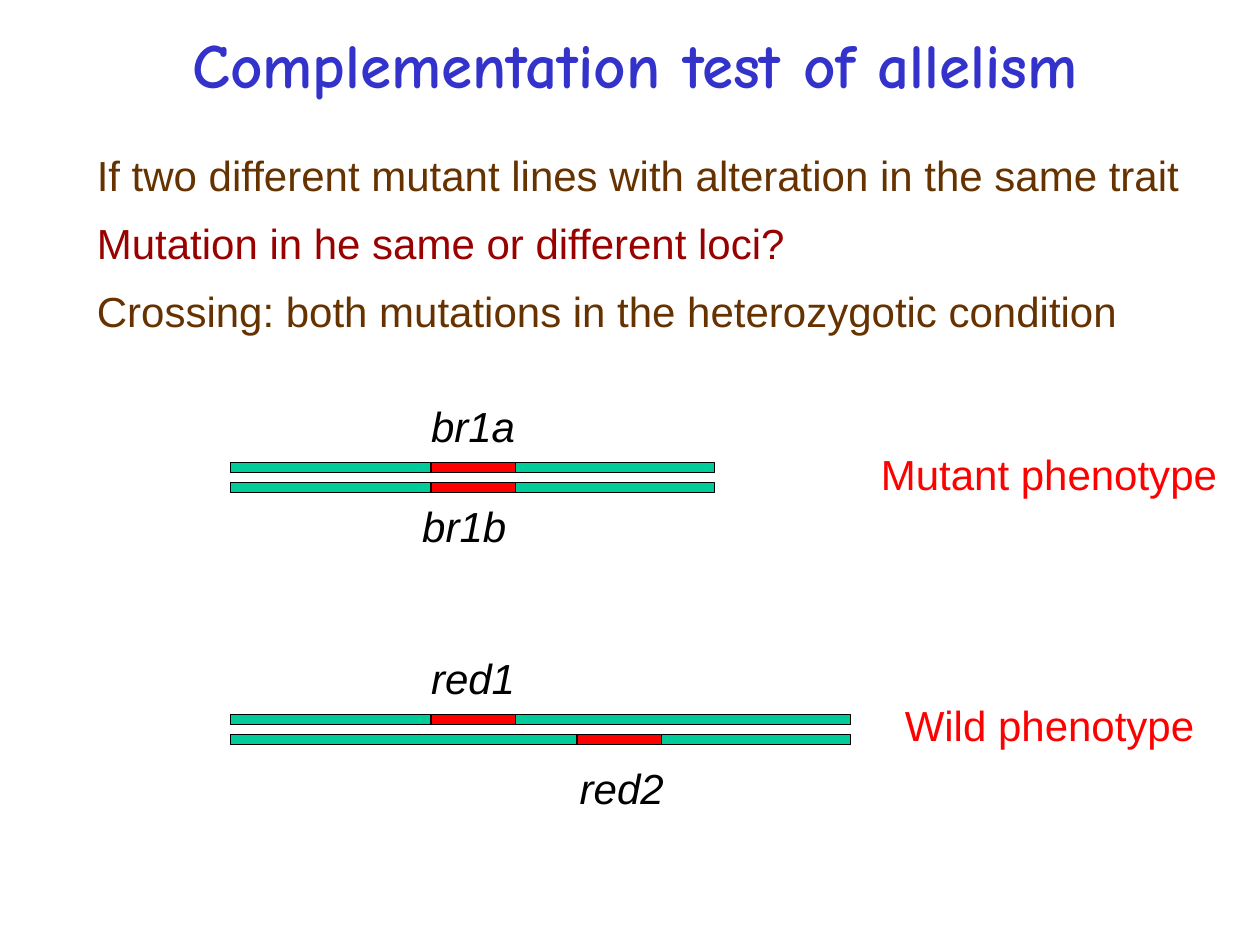
from dataclasses import dataclass

from pptx import Presentation
from pptx import util as u
from pptx.dml.color import RGBColor
from pptx.enum import shapes, text

COLORS = {
    "title": "3333CC",
    "brown": "663300",
    "dark_red": "990000",
    "chromosome": "00CC99",
    "red": "FF0000",
    "black": "000000",
}
STRAND_LEFT, STRAND_HEIGHT, LOCUS_WIDTH = 1.83, 0.08, 0.67
LABEL_HEIGHT = 0.5


@dataclass
class Strand:
    top: float
    right: float
    locus_left: float


@dataclass
class Label:
    caption: str
    left: float
    top: float
    width: float
    color: str = "black"
    italic: bool = True


STRANDS = [
    Strand(3.67, 5.67, 3.42),
    Strand(3.83, 5.67, 3.42),
    Strand(5.67, 6.75, 3.42),
    Strand(5.83, 6.75, 4.58),
]
LABELS = [
    Label("br1a", 3.32, 3.13, 0.87),
    Label("br1b", 3.25, 3.92, 0.87),
    Label("Mutant phenotype", 6.89, 3.51, 2.87, "red", False),
    Label("red1", 3.32, 5.13, 0.87),
    Label("red2", 4.5, 6, 0.87),
    Label("Wild phenotype", 7.08, 5.5, 2.5, "red", False),
]
# Statement, colour, line spacing, space before in points
STATEMENTS = [
    ("If two different mutant lines with alteration in the same trait", "brown", 1.35, 0),
    ("Mutation in he same or different loci?", "dark_red", 1.35, 0),
    ("Crossing: both mutations in the heterozygotic condition", "brown", 1, 9.7),
]


def rgb(name: str) -> RGBColor:
    return RGBColor.from_string(COLORS[name])


def add_box(page, left: float, top: float, width: float, height: float, wrap: bool = True):
    box = page.shapes.add_textbox(
        u.Inches(left), u.Inches(top), u.Inches(width), u.Inches(height))
    box.text_frame.word_wrap = wrap
    return box


def format_para(para, color: str, size: int = 24, font: str = "Arial",
                bold: bool = False, italic: bool = False) -> None:
    for span in para.runs:
        span.font.name = font
        span.font.size = u.Pt(size)
        span.font.bold = bold
        span.font.italic = italic
        span.font.color.rgb = rgb(color)


def add_title(page) -> None:
    frame = add_box(page, 0.33, 0.17, 9.42, 0.67).text_frame
    frame.text = "Complementation test of allelism"
    frame.vertical_anchor = text.MSO_ANCHOR.MIDDLE
    para = frame.paragraphs[0]
    para.alignment = text.PP_ALIGN.CENTER
    format_para(para, "title", size=36, font="Comic Neue", bold=True)


def add_statements(page) -> None:
    frame = add_box(page, 0.67, 1, 8.92, 1.66).text_frame
    frame.text = "\n".join(statement[0] for statement in STATEMENTS)
    for para, (_, color, spacing, before) in zip(frame.paragraphs, STATEMENTS):
        para.line_spacing = spacing
        para.space_before = u.Pt(before)
        format_para(para, color)


def add_segment(page, left: float, right: float, top: float, color: str) -> None:
    segment = page.shapes.add_shape(
        shapes.MSO_SHAPE.RECTANGLE, u.Inches(left), u.Inches(top),
        u.Inches(right - left), u.Inches(STRAND_HEIGHT))
    segment.shadow.inherit = False
    segment.fill.solid()
    segment.fill.fore_color.rgb = rgb(color)
    segment.line.color.rgb = rgb("black")
    segment.line.width = u.Pt(0.75)


def add_strand(page, strand: Strand) -> None:
    """Draw a chromosome as two arms around its mutated locus."""
    locus_right = strand.locus_left + LOCUS_WIDTH
    add_segment(page, STRAND_LEFT, strand.locus_left, strand.top, "chromosome")
    add_segment(page, locus_right, strand.right, strand.top, "chromosome")
    add_segment(page, strand.locus_left, locus_right, strand.top, "red")


def add_label(page, label: Label) -> None:
    box = add_box(page, label.left, label.top, label.width, LABEL_HEIGHT, wrap=False)
    box.text_frame.text = label.caption
    para = box.text_frame.paragraphs[0]
    para.alignment = text.PP_ALIGN.CENTER
    format_para(para, label.color, italic=label.italic)


def main() -> None:
    deck = Presentation()
    deck.slide_width, deck.slide_height = u.Inches(10), u.Inches(7.5)
    page = deck.slides.add_slide(deck.slide_layouts[6])
    add_title(page)
    add_statements(page)
    for strand in STRANDS:
        add_strand(page, strand)
    for label in LABELS:
        add_label(page, label)
    deck.save("out.pptx")


if __name__ == "__main__":
    main()
